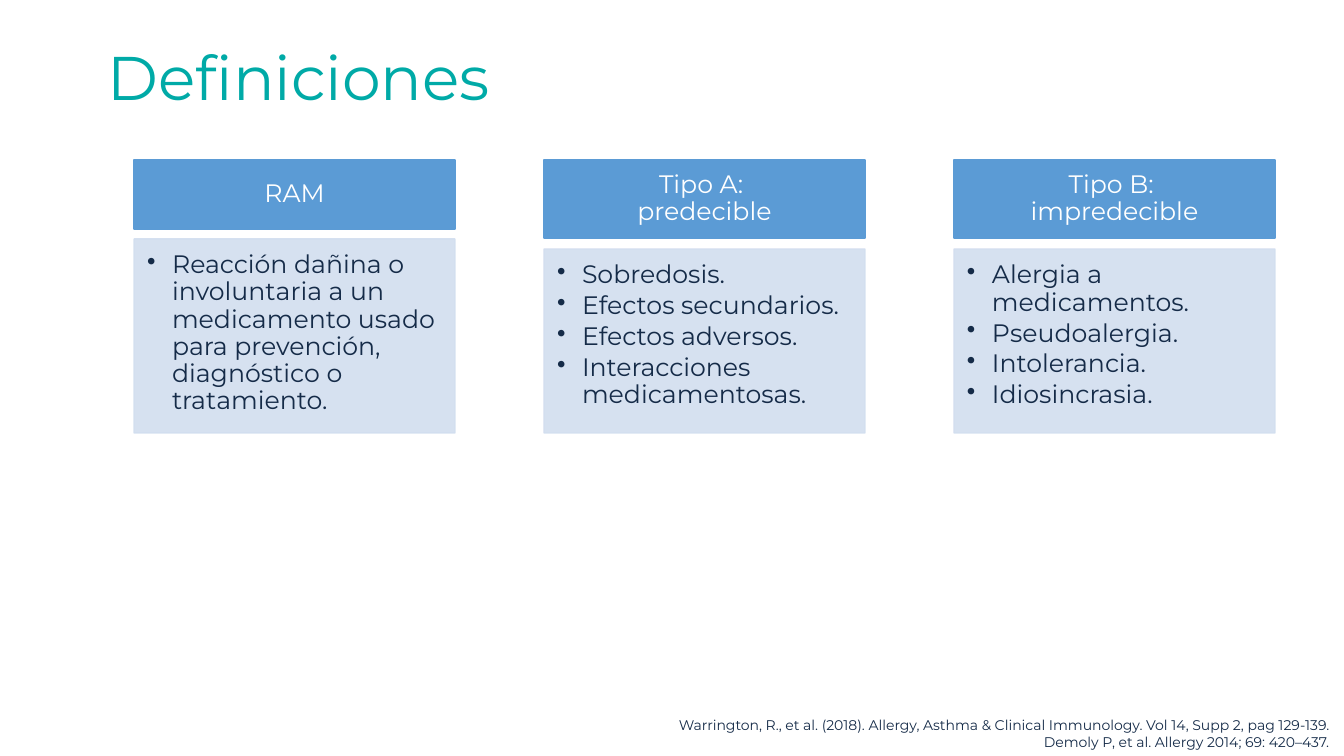
from lxml.etree import SubElement
from pptx import Presentation
from pptx.dml.color import RGBColor as RGB
from pptx.enum.shapes import MSO_SHAPE as SHAPE
from pptx.enum.text import MSO_ANCHOR as ANCHOR, PP_ALIGN as ALIGN
from pptx.oxml.ns import qn
from pptx.util import Emu, Pt

SCALE = 914400 / 100.8
COLORS = {"title": "00AAA7", "text": "152B48", "head": "5B9BD5",
          "body": "D2DEEF", "white": "FFFFFF"}
FONT = "Montserrat"
LEFT, TOP, WIDTH, STEP = 134, 160, 321, 410
COLUMNS = [
    ("RAM", 69, 239, 194,
     ["Reacción dañina o involuntaria a un medicamento usado para prevención, "
      "diagnóstico o tratamiento."]),
    ("Tipo A: \npredecible", 78, 249, 184,
     ["Sobredosis.", "Efectos secundarios.", "Efectos adversos.",
      "Interacciones medicamentosas."]),
    ("Tipo B: \nimpredecible", 78, 249, 184,
     ["Alergia a medicamentos.", "Pseudoalergia.", "Intolerancia.",
      "Idiosincrasia."]),
]
REFERENCES = [
    "Warrington, R., et al. (2018). Allergy, Asthma & Clinical Immunology. "
    "Vol 14, Supp 2, pag 129-139.",
    "Demoly P, et al. Allergy 2014; 69: 420–437.",
]
TITLE_FORMAT = {"alignment": ALIGN.CENTER, "line_spacing": 0.9}
REFERENCE_FORMAT = {"alignment": ALIGN.RIGHT}
HEAD_FORMAT = {"alignment": ALIGN.CENTER, "line_spacing": 0.9,
               "space_after": Pt(6.3)}
BODY_FORMAT = {"alignment": ALIGN.LEFT, "line_spacing": 0.9,
               "space_after": Pt(2.7)}


def px(n):
    """Turn px into EMU."""
    return Emu(round(n * SCALE))


def set_all(obj, values):
    """Set every attribute of a dict on an object."""
    for name, value in values.items():
        setattr(obj, name, value)


def add_bullet(p):
    """Give a paragraph a hanging round bullet."""
    pPr = p._p.get_or_add_pPr()
    pPr.set("marL", str(px(25)))
    pPr.set("indent", str(-px(25)))
    SubElement(pPr, qn("a:buChar")).set("char", "•")


def write(tf, lines, size, color, values, bullet=False):
    """Fill a text frame with one paragraph a line."""
    for i, line in enumerate(lines):
        p = tf.add_paragraph() if i else tf.paragraphs[0]
        p.text = line
        if bullet:
            add_bullet(p)
        set_all(p, values)
        for r in p.runs:
            set_all(r.font, {"name": FONT, "size": Pt(size)})
            r.font.color.rgb = RGB.from_string(COLORS[color])


def add_text(slide, box, anchor, *text):
    """Add a wrapped text box."""
    tf = slide.shapes.add_textbox(*map(px, box)).text_frame
    set_all(tf, {"word_wrap": True, "vertical_anchor": anchor})
    write(tf, *text)


def add_panel(slide, box, color, anchor, margins, alpha=None):
    """Add a filled rectangle and return its text frame."""
    s = slide.shapes.add_shape(SHAPE.RECTANGLE, *map(px, box))
    s.shadow.inherit = False
    s.fill.solid()
    s.line.fill.solid()
    s.line.width = Pt(1)
    for fill in (s.fill, s.line.fill):
        fill.fore_color.rgb = RGB.from_string(COLORS[color])
    if alpha:
        for clr in s._element.spPr.iter(qn("a:srgbClr")):
            SubElement(clr, qn("a:alpha")).set("val", str(alpha * 1000))
    tf = s.text_frame
    set_all(tf, {"word_wrap": True, "vertical_anchor": anchor})
    sides = ("margin_left", "margin_top", "margin_right", "margin_bottom")
    set_all(tf, dict(zip(sides, map(px, margins))))
    return tf


def add_column(slide, left, title, head_height, body_top, body_height, items):
    """Add a heading panel and its bulleted list panel."""
    tf = add_panel(slide, (left, TOP, WIDTH, head_height), "head",
                   ANCHOR.MIDDLE, (17, 10, 17, 10))
    write(tf, [title], 18, "white", HEAD_FORMAT)
    tf = add_panel(slide, (left, body_top, WIDTH, body_height), "body",
                   ANCHOR.TOP, (13, 13, 17, 19), alpha=90)
    write(tf, items, 18, "text", BODY_FORMAT, bullet=True)


def main():
    """Build and save the slide."""
    prs = Presentation()
    set_all(prs, {"slide_width": px(1344), "slide_height": px(756)})
    slide = prs.slides.add_slide(prs.slide_layouts[6])
    add_text(slide, (83, 14, 432, 134), ANCHOR.MIDDLE,
             ["Definiciones"], 44, "title", TITLE_FORMAT)
    add_text(slide, (650, 712, 689, 44), ANCHOR.TOP,
             REFERENCES, 10, "text", REFERENCE_FORMAT)
    for i, column in enumerate(COLUMNS):
        add_column(slide, LEFT + i * STEP, *column)
    prs.save("out.pptx")


if __name__ == "__main__":
    main()
